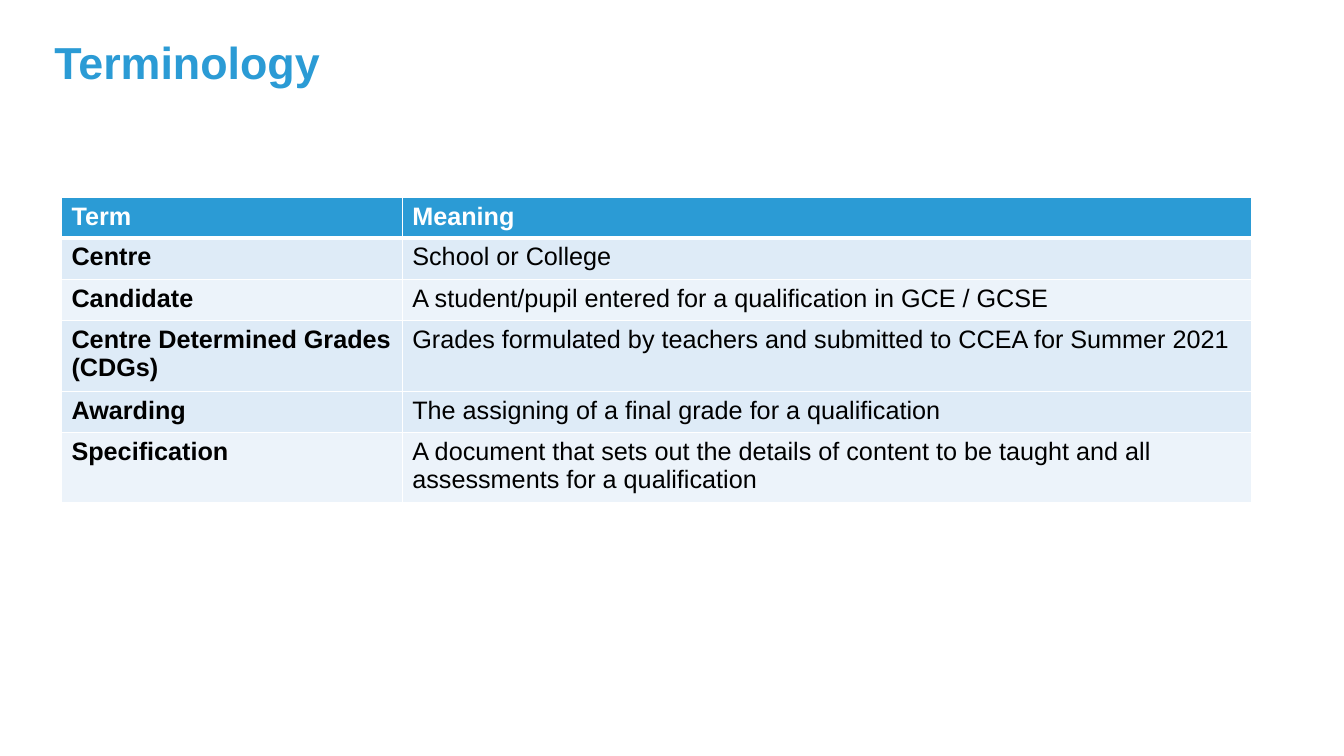
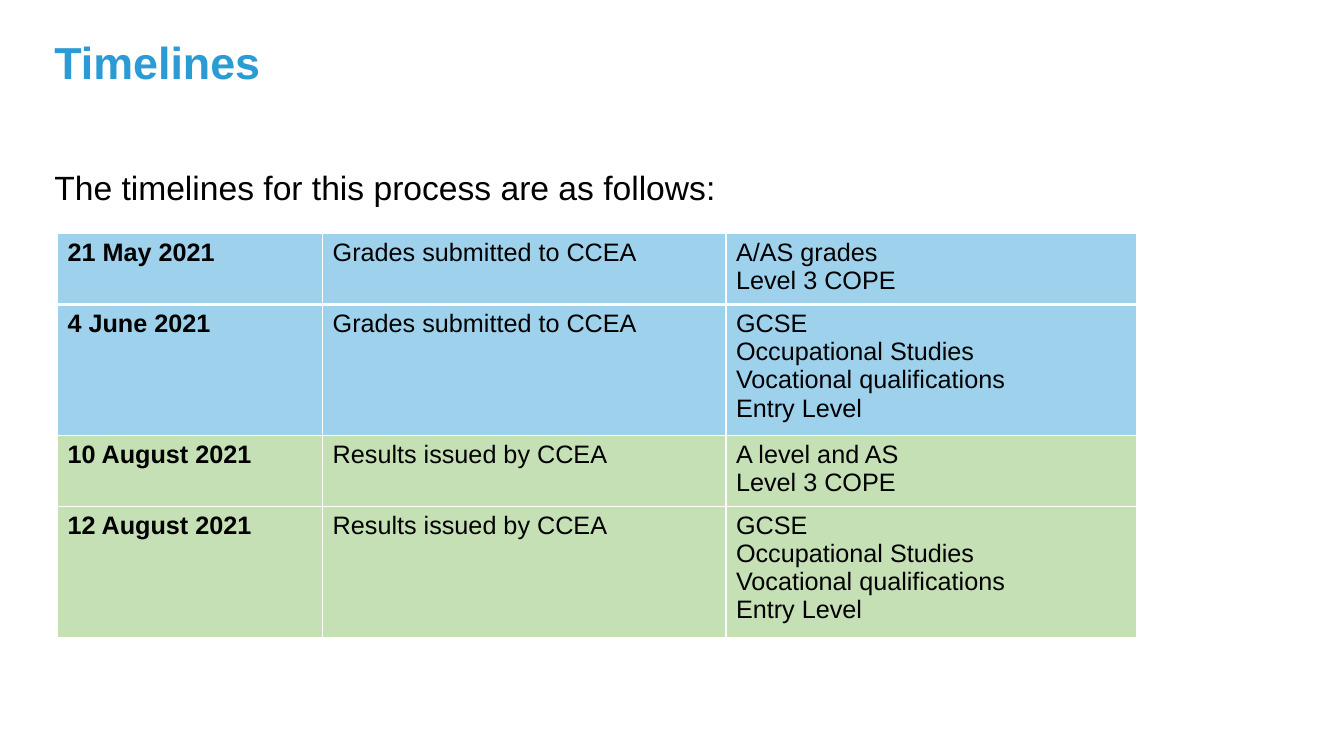
"""Build the terminology and timelines slides."""
from lxml.etree import SubElement
from pptx import Presentation
from pptx.dml.color import RGBColor
from pptx.oxml import parse_xml
from pptx.oxml.ns import nsdecls
from pptx.util import Inches, Pt

FONT = "Arial"
BLUE, WHITE, BLACK = "2B9BD5", "FFFFFF", "000000"
PALE, PALER = "DEEBF7", "ECF3FA"
SKY, GREEN = "9ED2EC", "C5E0B4"


def style_text(tf, size, color, bold=False):
    for p in tf.paragraphs:
        for r in p.runs:
            r.font.name = FONT
            r.font.size = Pt(size)
            r.font.bold = bold
            r.font.color.rgb = RGBColor.from_string(color)


def add_text(s, text, left, top, width, height, size, color, bold=False):
    tf = s.shapes.add_textbox(Inches(left), Inches(top), Inches(width), Inches(height)).text_frame
    tf.word_wrap = True
    tf.text = text
    tf.paragraphs[0].line_spacing = 0.9
    style_text(tf, size, color, bold)


qualifications = "GCSE\nOccupational Studies\nVocational qualifications\nEntry Level"
terms = [
    ("Term", "Meaning"),
    ("Centre", "School or College"),
    ("Candidate", "A student/pupil entered for a qualification in GCE / GCSE"),
    ("Centre Determined Grades (CDGs)",
     "Grades formulated by teachers and submitted to CCEA for Summer 2021"),
    ("Awarding", "The assigning of a final grade for a qualification"),
    ("Specification",
     "A document that sets out the details of content to be taught and all assessments for a qualification"),
]
dates = [
    ("21 May 2021", "Grades submitted to CCEA", "A/AS grades\nLevel 3 COPE"),
    ("4 June 2021", "Grades submitted to CCEA", qualifications),
    ("10 August 2021", "Results issued by CCEA", "A level and AS\nLevel 3 COPE"),
    ("12 August 2021", "Results issued by CCEA", qualifications),
]
slides = [
    dict(title="Terminology", intro=None, rows=terms, left=0.61, top=1.96, widths=[3.38, 8.42],
         heights=[0.4, 0.41, 0.41, 0.66, 0.41, 0.66],
         fills=[BLUE, PALE, PALER, PALE, PALE, PALER], header=True),
    dict(title="Timelines", intro="The timelines for this process are as follows:", rows=dates,
         left=0.57, top=2.32, widths=[2.63, 4, 4.07], heights=[0.66, 1.21, 0.66, 1.21],
         fills=[SKY, SKY, GREEN, GREEN], header=False),
]

prs = Presentation()
prs.slide_width, prs.slide_height = Inches(13.33), Inches(7.5)

for content in slides:
    s = prs.slides.add_slide(prs.slide_layouts[6])
    add_text(s, content["title"], 0.44, 0.36, 10.55, 1.2, 32, BLUE, True)
    if content["intro"]:
        add_text(s, content["intro"], 0.44, 1.65, 12.45, 0.6, 24, BLACK)

    rows, widths, heights = content["rows"], content["widths"], content["heights"]
    table = s.shapes.add_table(
        len(rows), len(widths), Inches(content["left"]), Inches(content["top"]),
        Inches(sum(widths)), Inches(sum(heights))).table
    table.first_row = content["header"]
    table.horz_banding = False
    for column, width in zip(table.columns, widths):
        column.width = Inches(width)

    for i, (texts, height, fill) in enumerate(zip(rows, heights, content["fills"])):
        table.rows[i].height = Inches(height)
        is_header = content["header"] and i == 0
        for j, text in enumerate(texts):
            cell = table.cell(i, j)
            cell.text_frame.text = text
            style_text(cell.text_frame, 18, WHITE if is_header else BLACK, is_header or j == 0)
            cell.fill.solid()
            cell.fill.fore_color.rgb = RGBColor.from_string(fill)
            weights = {"lnL": 1, "lnR": 1, "lnT": 3 if i == 1 else 1, "lnB": 3 if i == 0 else 1}
            for k, (side, weight) in enumerate(weights.items()):
                line = parse_xml(
                    f'<a:{side} {nsdecls("a")} w="{Pt(weight)}"><a:solidFill>'
                    f'<a:srgbClr val="{WHITE}"/></a:solidFill></a:{side}>')
                cell._tc.get_or_add_tcPr().insert(k, line)

prs.save("out.pptx")
